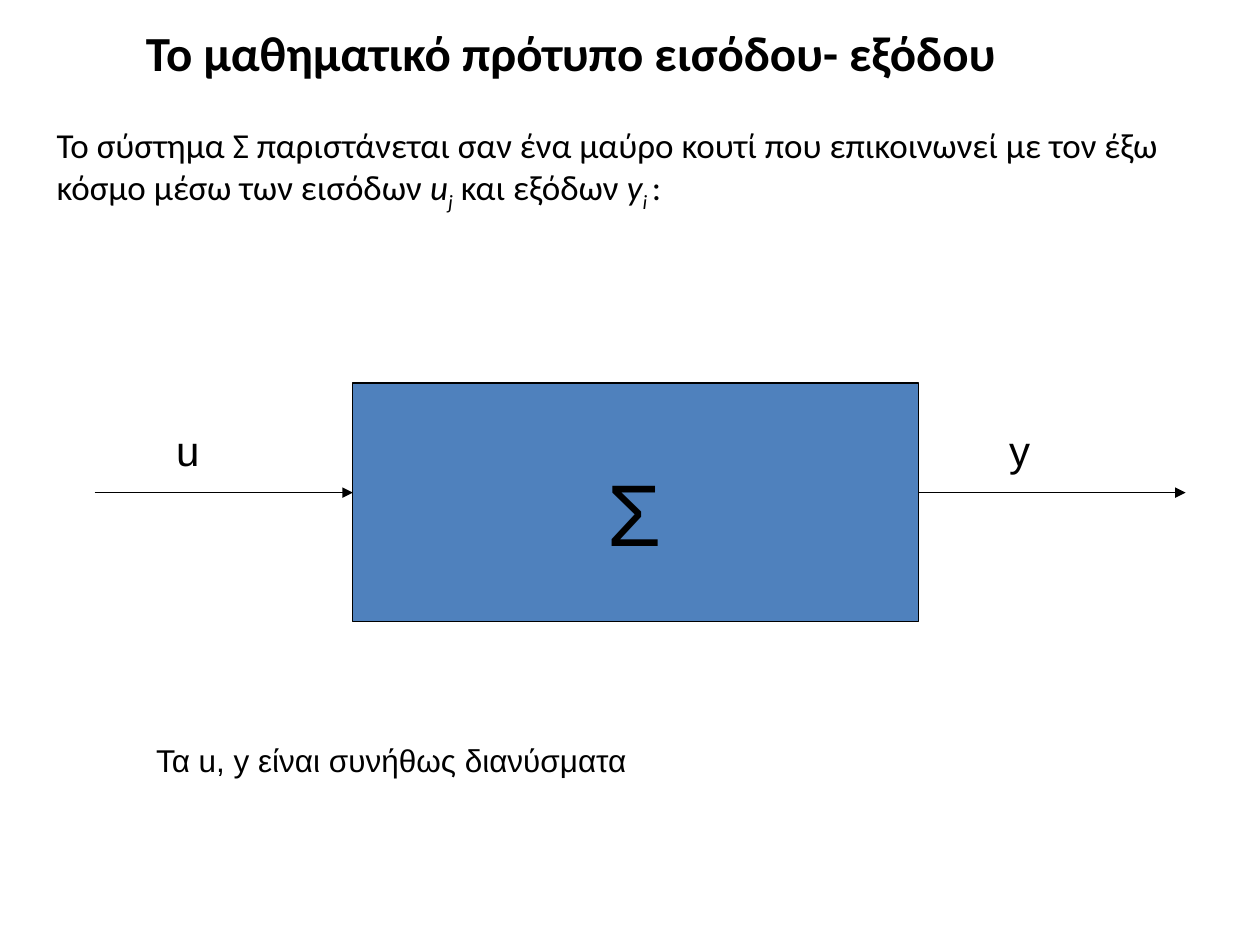
"""Build a slide showing the input-output model of a system as a block diagram."""
from lxml import etree
from pptx import Presentation
from pptx import util as u
from pptx.dml.color import RGBColor
from pptx.enum import shapes, text
from pptx.oxml import ns

COLORS = {"ink": "000000", "block": "4F81BD", "background": "FFFFFF"}

TITLE = [("Το μαθηματικό πρότυπο εισόδου- εξόδου", "bold")]
DESCRIPTION = [
    ("To σύστημα Σ παριστάνεται σαν ένα μαύρο κουτί που επικοινωνεί με τον έξω "
     "κόσμο μέσω των εισόδων ", ""),
    ("u", "italic"), ("j", "italic sub"), (" και εξόδων ", ""),
    ("y", "italic"), ("i ", "italic sub"), (":", ""),
]
HEADINGS = [
    (TITLE, (1.06, 0.13, 7.23, 0.57), dict(size=28, wrap=False)),
    (DESCRIPTION, (0.35, 0.95, 9.21, 0.77),
     dict(size=20, anchor=text.MSO_ANCHOR.MIDDLE)),
]
LABELS = [
    ("Σ", (3.5, 3.51, 3.07, 0.93), 50, text.PP_ALIGN.CENTER),
    ("u", (1.3, 3.28, 0.87, 0.5), 24, text.PP_ALIGN.LEFT),
    ("y", (7.91, 3.28, 1.02, 0.5), 24, text.PP_ALIGN.LEFT),
    ("Τα u, y είναι συνήθως διανύσματα", (1.14, 5.8, 4.17, 0.4), 18,
     text.PP_ALIGN.LEFT),
]
BLOCK = (2.8, 3.04, 4.49, 1.89)
SIGNAL_Y, SIGNAL_START, SIGNAL_END = 3.91, 0.75, 9.41


def color(name):
    return RGBColor.from_string(COLORS[name])


def inches(values):
    return [u.Inches(value) for value in values]


def add_text(slide, runs, box, size, font="Calibri", wrap=True, top=0.05,
             anchor=text.MSO_ANCHOR.TOP, align=text.PP_ALIGN.LEFT):
    frame = slide.shapes.add_textbox(*inches(box)).text_frame
    frame.word_wrap = wrap
    frame.vertical_anchor = anchor
    frame.margin_top = u.Inches(top)
    paragraph = frame.paragraphs[0]
    paragraph.alignment = align
    for words, style in runs:
        run = paragraph.add_run()
        run.text = words
        run.font.name = font
        run.font.size = u.Pt(size)
        run.font.color.rgb = color("ink")
        run.font.bold = "bold" in style
        run.font.italic = "italic" in style
        if "sub" in style:
            run._r.get_or_add_rPr().set("baseline", "-25000")


def add_block(slide):
    block = slide.shapes.add_shape(shapes.MSO_SHAPE.RECTANGLE, *inches(BLOCK))
    block.shadow.inherit = False
    block.fill.solid()
    block.fill.fore_color.rgb = color("block")
    block.line.color.rgb = color("ink")
    block.line.width = u.Pt(0.75)


def add_signal(slide, start, end):
    arrow = slide.shapes.add_connector(
        shapes.MSO_CONNECTOR.STRAIGHT, *inches((start, SIGNAL_Y, end, SIGNAL_Y)))
    arrow.line.color.rgb = color("ink")
    arrow.line.width = u.Pt(0.75)
    etree.SubElement(arrow.line._get_or_add_ln(), ns.qn("a:tailEnd"), type="triangle")
    etree.SubElement(arrow._element.spPr, ns.qn("a:effectLst"))


def main():
    presentation = Presentation()
    presentation.slide_width, presentation.slide_height = inches((10, 7.5))
    slide = presentation.slides.add_slide(presentation.slide_layouts[6])
    slide.background.fill.solid()
    slide.background.fill.fore_color.rgb = color("background")

    for runs, box, style in HEADINGS:
        add_text(slide, runs, box, **style)
    add_block(slide)
    add_signal(slide, SIGNAL_START, BLOCK[0])
    add_signal(slide, BLOCK[0] + BLOCK[2], SIGNAL_END)
    for words, box, size, align in LABELS:
        add_text(slide, [(words, "")], box, size=size, font="Arial", align=align,
                 top=0.05 + size / 600)

    presentation.save("out.pptx")


if __name__ == "__main__":
    main()
